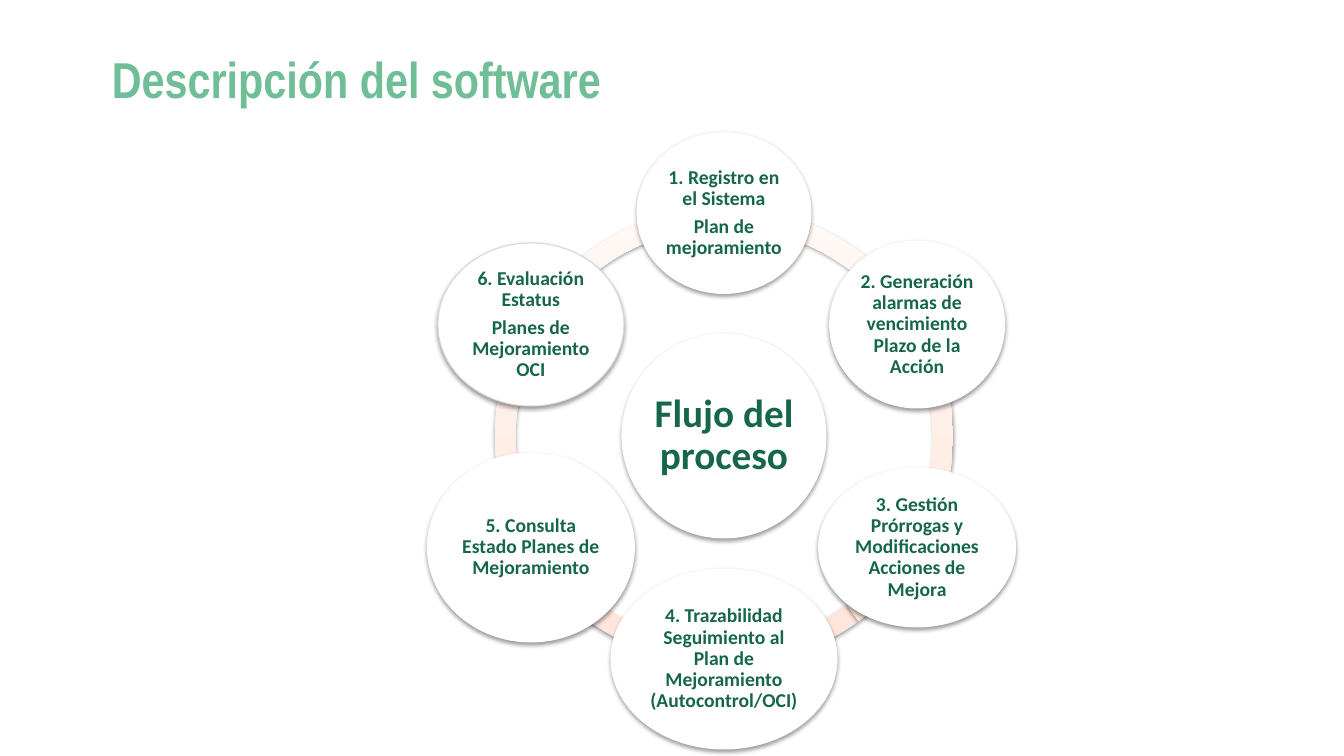
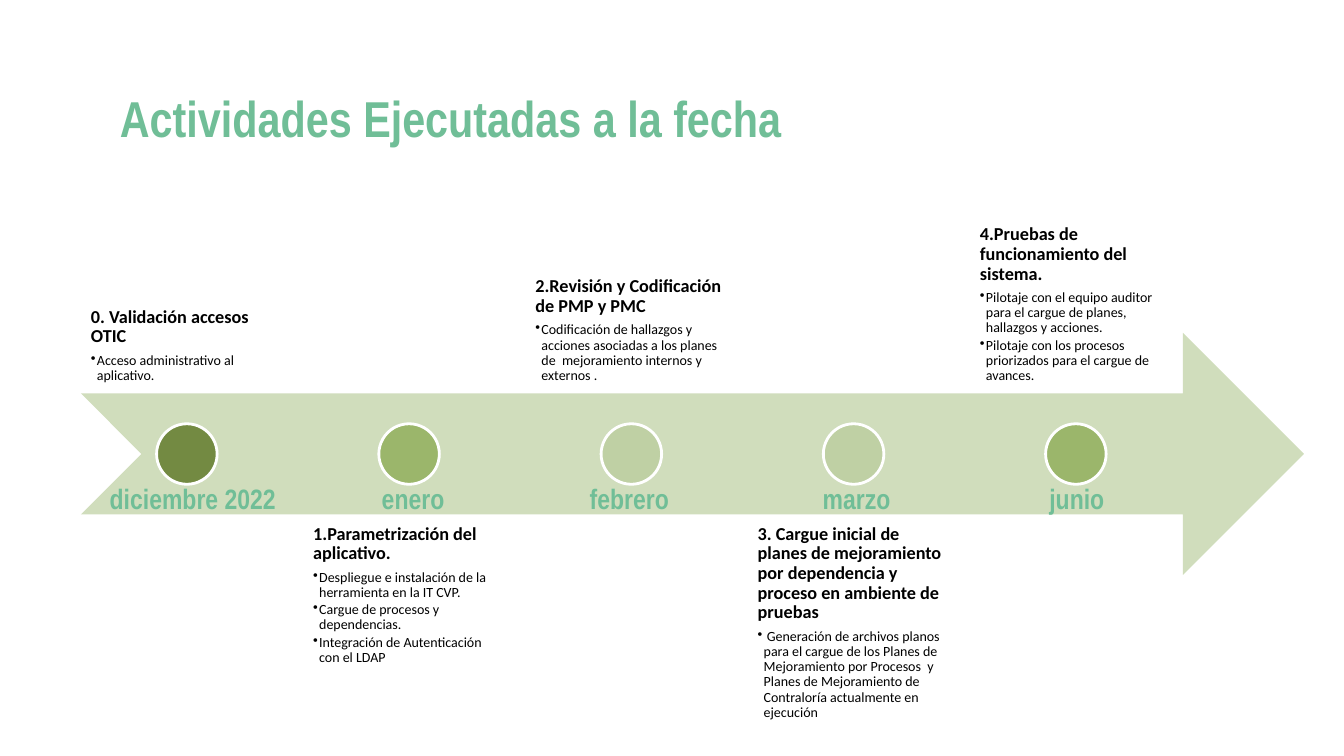
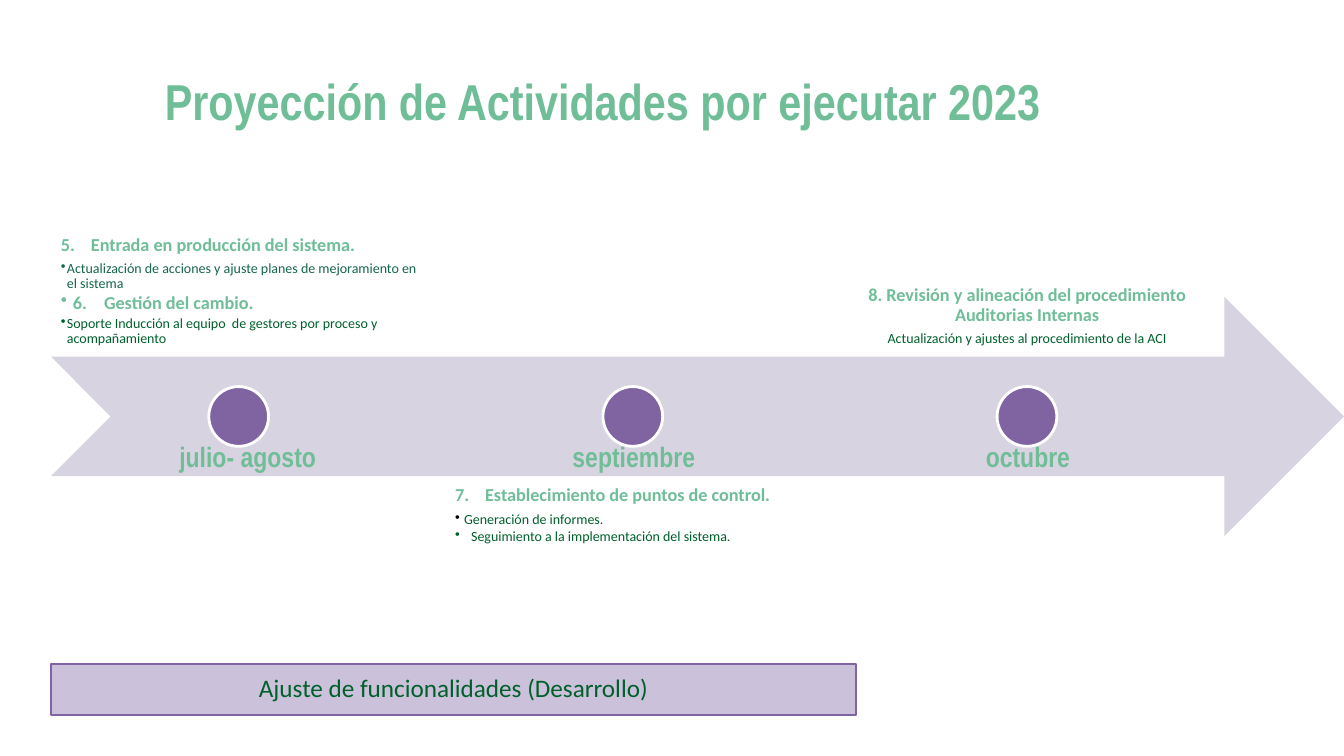
import math
from pptx import Presentation
from pptx import util as u
from pptx.dml.color import RGBColor
from pptx.enum import shapes, text
from pptx.oxml import parse_xml
from pptx.oxml.ns import nsdecls

PX = 914400 / 100.8
WHITE, BLACK = "FFFFFF", "000000"
MINT, GREEN, DARK = "70BE97", "166649", "00602B"
PURPLE, LILAC = "8064A2", "CCC1DA"
BODY, HEAD = "Calibri", "Arial Narrow"
LEFT, MID = text.PP_ALIGN.LEFT, text.PP_ALIGN.CENTER
KIND = shapes.MSO_SHAPE


def px(n):
    return u.Emu(round(n * PX))


def rgb(code):
    return RGBColor.from_string(code)


def node(xml):
    """Parse one drawing element written without its namespace."""
    tag, rest = xml[:-2].split(" ", 1) if xml.endswith("/>") else xml.split(" ", 1)
    end = "/>" if xml.endswith("/>") else ""
    return parse_xml(f"{tag} {nsdecls('a')} {rest}{end}")


# Text parts
def head(words, size=13, color=BLACK, **more):
    return dict(words=words, size=size, color=color, bold=True,
                after=0.35, **more)


def item(words, color=BLACK, size=10, bold=False, dent=6, after=0.15, **more):
    return dict(words=words, size=size, color=color, bold=bold,
                dent=dent, after=after, **more)


def para(p, words, size, color, bold=False, font=BODY, align=LEFT,
         after=0, dent=0, mark=None, tab=0):
    p.alignment, p.line_spacing = align, 0.9
    p.space_after = u.Pt(round(after * size, 2))
    props = p._p.get_or_add_pPr()
    if dent:
        props.set("marL", str(px(dent)))
        props.set("indent", str(-px(dent)))
        if mark:
            props.append(node(f'<a:buClr ><a:srgbClr val="{mark}"/></a:buClr>'))
        props.append(node('<a:buChar char="•"/>'))
    if tab:
        props.append(node(f'<a:tabLst ><a:tab pos="{px(tab)}" algn="l"/></a:tabLst>'))
    run = p.add_run()
    run.text = words
    run.font.name, run.font.size, run.font.bold = font, u.Pt(size), bold
    run.font.color.rgb = rgb(color)


def write(shape, paras, anchor="MIDDLE", inset=None, wrap=True):
    frame = shape.text_frame
    frame.word_wrap = wrap
    frame.vertical_anchor = getattr(text.MSO_ANCHOR, anchor)
    if inset is not None:
        frame.margin_left = frame.margin_right = px(inset)
        frame.margin_top = frame.margin_bottom = px(inset)
    for i, spec in enumerate(paras):
        para(frame.add_paragraph() if i else frame.paragraphs[0], **spec)


def label(slide, box, paras, **more):
    write(slide.shapes.add_textbox(*map(px, box)), paras, **more)


# Shape parts
def draw(slide, kind, box, fill=None, line=None, width=2):
    shape = slide.shapes.add_shape(kind, *map(px, box))
    shape.shadow.inherit = False
    if fill:
        shape.fill.solid()
        shape.fill.fore_color.rgb = rgb(fill)
    if line:
        shape.line.color.rgb = rgb(line)
        shape.line.width = u.Pt(width)
    else:
        shape.line.fill.background()
    return shape


def shade(shape):
    """Add a soft shadow below the shape."""
    effects = shape._element.spPr.find(
        "{http://schemas.openxmlformats.org/drawingml/2006/main}effectLst")
    effects.append(node(
        '<a:outerShdw blurRad="40000" dist="20000" dir="5400000" rotWithShape="0">'
        '<a:srgbClr val="000000"><a:alpha val="38000"/></a:srgbClr></a:outerShdw>'))


def title(slide, words, box):
    label(slide, box, [dict(words=words, size=36, color=MINT, bold=True, font=HEAD)])


# Process wheel
def disc(slide, mid, size, lines, points, line=None):
    (x, y), (w, h) = mid, size
    shape = draw(slide, KIND.OVAL, (x - w / 2, y - h / 2, w, h), WHITE, line, 0.75)
    shade(shape)
    write(shape, [head(t, points, GREEN, align=MID) for t in lines], inset=2)


def wheel(slide, box, hub, steps):
    x, y, w, h = box
    cx, cy = x + w / 2, y + h / 2
    # Ring of arcs
    stops = [126, 90, 54, 18, 198, 162]
    for i, end in enumerate([162] + stops[:-1]):
        arc = draw(slide, KIND.BLOCK_ARC, box)
        for k, value in enumerate((stops[i] * 0.6, end * 0.6, 0.045)):
            arc.adjustments[k] = value
        arc.fill.gradient()
        arc.fill.gradient_angle = 90
        for stop, at, tint in zip(arc.fill.gradient_stops, (0, 1), ("FFE5DA", "FFF8F5")):
            stop.position, stop.color.rgb = at, rgb(tint)
        shade(arc)
    # Hub and steps, clockwise from the top
    disc(slide, (cx, cy), (205, 205), [hub], 28)
    reach = 223
    for i, (size, lines, line) in enumerate(steps):
        turn = math.radians(i * 360 / len(steps) - 90)
        spot = cx + reach * math.cos(turn), cy + reach * math.sin(turn)
        disc(slide, spot, size, lines, 14, line)


# Timeline arrow
def line(slide, box, fill, drop, marks):
    x, y, w, h = box
    draw(slide, KIND.NOTCHED_RIGHT_ARROW, box, fill)
    n = len(marks)
    col = 0.9 * w / (n + 0.05 * (n - 1))
    dot = h / 4
    for i, (month, shift, tint, paras) in enumerate(marks):
        left = x + i * col * 1.05
        up = i % 2 == 0
        top = y + (-0.75 if up else 0.75) * h
        label(slide, (left, top, col, h), paras,
              anchor="BOTTOM" if up else "TOP", inset=10)
        mid = left + col / 2
        draw(slide, KIND.OVAL, (mid - dot / 2, y + (h - dot) / 2, dot, dot), tint, WHITE)
        label(slide, (mid + shift - 100, y + drop, 200, 48),
              [dict(words=month, size=20, color=MINT, bold=True, font=HEAD, align=MID)],
              wrap=False)


def flow(slide):
    wheel(slide, (495, 207, 458, 458), "Flujo del proceso", [
        ((175, 162), ["1. Registro en el Sistema", "Plan de mejoramiento"], None),
        ((176, 168), ["2. Generación alarmas de vencimiento Plazo de la Acción"], None),
        ((198, 160), ["3. Gestión Prórrogas y Modificaciones Acciones de Mejora"], None),
        ((227, 181), ["4. Trazabilidad Seguimiento al Plan de Mejoramiento "
                      "(Autocontrol/OCI)"], None),
        ((208, 190), ["5. Consulta Estado Planes de Mejoramiento"], None),
        ((186, 163), ["6. Evaluación Estatus", "Planes de Mejoramiento OCI"], "D9D9D9"),
    ])
    title(slide, "Descripción del software", (102, 35, 857, 95))


def done(slide):
    title(slide, "Actividades Ejecutadas a la fecha", (110, 74, 857, 95))
    line(slide, (81, 333, 1223, 242), "D0DDBC", 143, [
        ("diciembre 2022", 6, "738A42", [
            head("0. Validación accesos OTIC"),
            item("Acceso administrativo al aplicativo.")]),
        ("enero", 4, "9BB66B", [
            head("1.Parametrización del aplicativo."),
            item("Despliegue e instalación de la herramienta en la IT CVP."),
            item("Cargue de procesos y dependencias."),
            item("Integración de Autenticación con el LDAP")]),
        ("febrero", -2, "BFD0A4", [
            head("2.Revisión y Codificación de PMP y PMC"),
            item("Codificación de hallazgos y acciones asociadas a los planes "
                 "de  mejoramiento internos y externos .")]),
        ("marzo", 3, "BFD0A4", [
            head("3. Cargue inicial de planes de mejoramiento por dependencia "
                 "y proceso en ambiente de pruebas"),
            item(" Generación de archivos planos para el cargue de los Planes de "
                 "Mejoramiento por Procesos  y Planes de Mejoramiento de "
                 "Contraloría actualmente en ejecución")]),
        ("junio", 1, "9BB66B", [
            head("4.Pruebas de funcionamiento del sistema."),
            item("Pilotaje con el equipo auditor para el cargue de planes, "
                 "hallazgos y acciones."),
            item("Pilotaje con los procesos priorizados para el cargue de avances.")]),
    ])


def plan(slide):
    title(slide, "Proyección de Actividades por ejecutar 2023", (155, 57, 926, 95))
    line(slide, (51, 297, 1293, 239), "D8D3E0", 137, [
        ("julio- agosto", 9, PURPLE, [
            head("5.\tEntrada en producción del sistema.", color=MINT, tab=30),
            item("Actualización de acciones y ajuste planes de mejoramiento "
                 "en el sistema", GREEN),
            item("6.\tGestión del cambio.", MINT, 13, True, dent=12, tab=43),
            item("Soporte Inducción al equipo  de gestores por proceso y "
                 "acompañamiento", DARK)]),
        ("septiembre", 1, PURPLE, [
            head("7.\tEstablecimiento de puntos de control.", color=MINT, tab=30),
            item("Generación de informes.", DARK, dent=9, mark=BLACK),
            item("Seguimiento a la implementación del sistema.", DARK, dent=16)]),
        ("octubre", 1, PURPLE, [
            head("8. Revisión y alineación del procedimiento Auditorias Internas",
                 color=MINT, align=MID),
            item("Actualización y ajustes al procedimiento de la ACI", DARK,
                 dent=0, after=0.35, align=MID)]),
    ])
    # Development bar
    bar = draw(slide, KIND.RECTANGLE, (51, 664, 805, 51), LILAC, PURPLE)
    write(bar, [dict(words="Ajuste de funcionalidades (Desarrollo)", size=18,
                     color=DARK, align=MID)])


def main():
    deck = Presentation()
    deck.slide_width, deck.slide_height = px(1344), px(756)
    for build in (flow, done, plan):
        build(deck.slides.add_slide(deck.slide_layouts[6]))
    deck.save("out.pptx")


if __name__ == "__main__":
    main()
